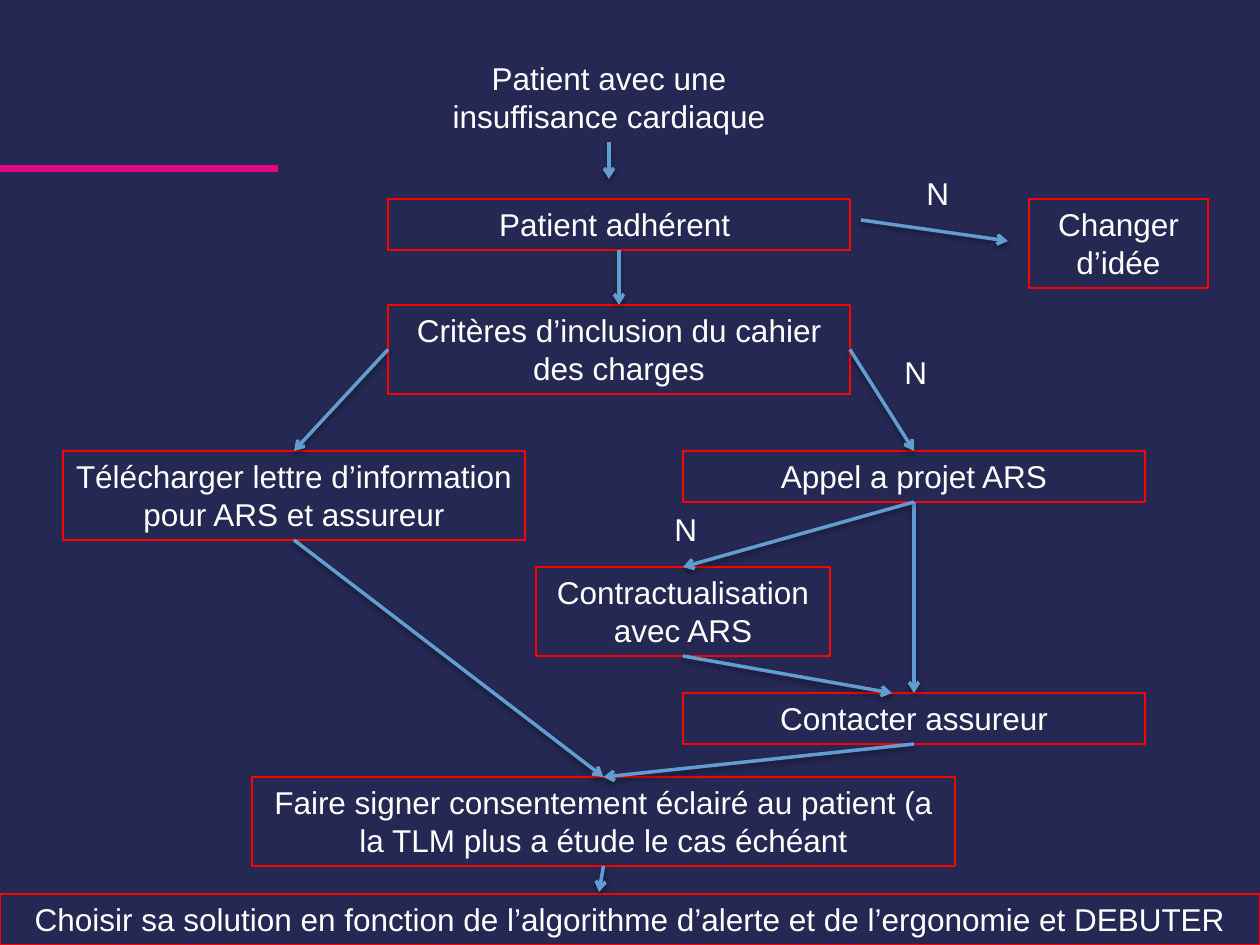
from dataclasses import dataclass

from lxml.etree import SubElement
from pptx import Presentation
from pptx.dml.color import RGBColor
from pptx.enum.shapes import MSO_CONNECTOR, MSO_SHAPE
from pptx.enum.text import MSO_ANCHOR, MSO_AUTO_SIZE, PP_ALIGN
from pptx.oxml.ns import qn
from pptx.util import Emu, Pt

SCALE = 914400 / 126
NAVY, WHITE, RED, BLUE, PINK = "242852", "FFFFFF", "FF0000", "629DD1", "E10880"
TOP, LEFT, BOTTOM, RIGHT = range(4)
ONE, TWO = 51, 89  # box heights for one and two lines of text


@dataclass
class Box:
    text: str
    x: int
    y: int
    w: int
    h: int


@dataclass
class Joint:
    box: str
    side: int


@dataclass
class Point:
    x: int
    y: int


@dataclass
class Arrow:
    start: Joint | Point
    end: Joint | Point


HEAD = Box("Patient avec une insuffisance cardiaque", 420, 53, 378, TWO)

STEPS = {
    "criteria": Box("Critères d’inclusion du cahier des charges", 388, 305, 462, TWO),
    "adherent": Box("Patient adhérent ", 388, 199, 462, ONE),
    "letter": Box("Télécharger lettre d’information pour ARS et assureur",
                  63, 451, 462, TWO),
    "call": Box("Appel a projet ARS", 683, 451, 462, ONE),
    "contract": Box("Contractualisation avec ARS", 536, 567, 294, TWO),
    "consent": Box("Faire signer consentement éclairé au patient "
                   "(a la TLM plus a étude le cas échéant", 252, 777, 703, TWO),
    "insurer": Box("Contacter assureur", 683, 693, 462, ONE),
    "choose": Box("Choisir sa solution en fonction de l’algorithme d’alerte "
                  "et de l’ergonomie et DEBUTER", 0, 894, 1260, ONE),
    "change": Box("Changer d’idée", 1029, 199, 179, TWO),
}

ARROWS = [
    Arrow(Joint("head", BOTTOM), Point(609, 179)),
    Arrow(Point(861, 220), Point(1008, 241)),
    Arrow(Joint("adherent", BOTTOM), Joint("criteria", TOP)),
    Arrow(Joint("criteria", LEFT), Joint("letter", TOP)),
    Arrow(Joint("criteria", RIGHT), Joint("call", TOP)),
    Arrow(Joint("call", BOTTOM), Joint("insurer", TOP)),
    Arrow(Joint("call", BOTTOM), Joint("contract", TOP)),
    Arrow(Joint("letter", BOTTOM), Joint("consent", TOP)),
    Arrow(Joint("insurer", BOTTOM), Joint("consent", TOP)),
    Arrow(Joint("consent", BOTTOM), Point(599, 892)),
    Arrow(Joint("contract", BOTTOM), Point(892, 693)),
]

NOES = [Point(892, 347), Point(914, 168), Point(662, 504)]


def px(n: int) -> Emu:
    return Emu(round(n * SCALE))


def paint(target, color: str) -> None:
    target.solid()
    target.fore_color.rgb = RGBColor.from_string(color)


def write(shape, text: str, align) -> None:
    frame = shape.text_frame
    frame.word_wrap = True
    frame.auto_size = MSO_AUTO_SIZE.SHAPE_TO_FIT_TEXT
    frame.vertical_anchor = MSO_ANCHOR.TOP
    para = frame.paragraphs[0]
    para.text = text
    para.alignment = align
    para.font.name = "Arial"
    para.font.size = Pt(18)
    paint(para.font.fill, WHITE)


def add_label(slide, box: Box, align):
    label = slide.shapes.add_textbox(px(box.x), px(box.y), px(box.w), px(box.h))
    write(label, box.text, align)
    return label


def add_step(slide, box: Box):
    step = slide.shapes.add_shape(
        MSO_SHAPE.RECTANGLE, px(box.x), px(box.y), px(box.w), px(box.h))
    step.shadow.inherit = False
    step.fill.background()
    paint(step.line.fill, RED)
    step.line.width = Pt(0.75)
    write(step, box.text, PP_ALIGN.CENTER)
    return step


def add_line(slide, start: Point, end: Point, color: str, width: int):
    """Draw a straight line; return it with its empty effect list."""
    line = slide.shapes.add_connector(
        MSO_CONNECTOR.STRAIGHT, px(start.x), px(start.y), px(end.x), px(end.y))
    paint(line.line.fill, color)
    line.line.width = Pt(width)
    effects = SubElement(line._element.spPr, qn("a:effectLst"))
    return line, effects


def add_arrow(slide, arrow: Arrow, nodes: dict) -> None:
    start, end = (p if isinstance(p, Point) else Point(0, 0)
                  for p in (arrow.start, arrow.end))
    line, effects = add_line(slide, start, end, BLUE, 2)
    if isinstance(arrow.start, Joint):
        line.begin_connect(nodes[arrow.start.box], arrow.start.side)
    if isinstance(arrow.end, Joint):
        line.end_connect(nodes[arrow.end.box], arrow.end.side)
    SubElement(line.line._get_or_add_ln(), qn("a:tailEnd"), type="arrow")
    # Soft shadow straight below
    shadow = SubElement(effects, qn("a:outerShdw"), blurRad=str(Pt(3.1)),
                        dist=str(Pt(1.6)), dir="5400000", rotWithShape="0")
    tint = SubElement(shadow, qn("a:srgbClr"), val="000000")
    SubElement(tint, qn("a:alpha"), val="38000")


def main() -> None:
    deck = Presentation()
    deck.slide_width, deck.slide_height = px(1260), px(945)
    slide = deck.slides.add_slide(deck.slide_layouts[6])
    paint(slide.background.fill, NAVY)

    # Accent rule
    add_line(slide, Point(0, 169), Point(278, 169), PINK, 4)

    # Flowchart steps
    nodes = {"head": add_label(slide, HEAD, PP_ALIGN.CENTER)}
    for name, box in STEPS.items():
        nodes[name] = add_step(slide, box)

    # Arrows and their "no" labels
    for arrow in ARROWS:
        add_arrow(slide, arrow, nodes)
    for spot in NOES:
        add_label(slide, Box("N", spot.x, spot.y, 53, ONE), PP_ALIGN.LEFT)

    deck.save("out.pptx")


if __name__ == "__main__":
    main()
